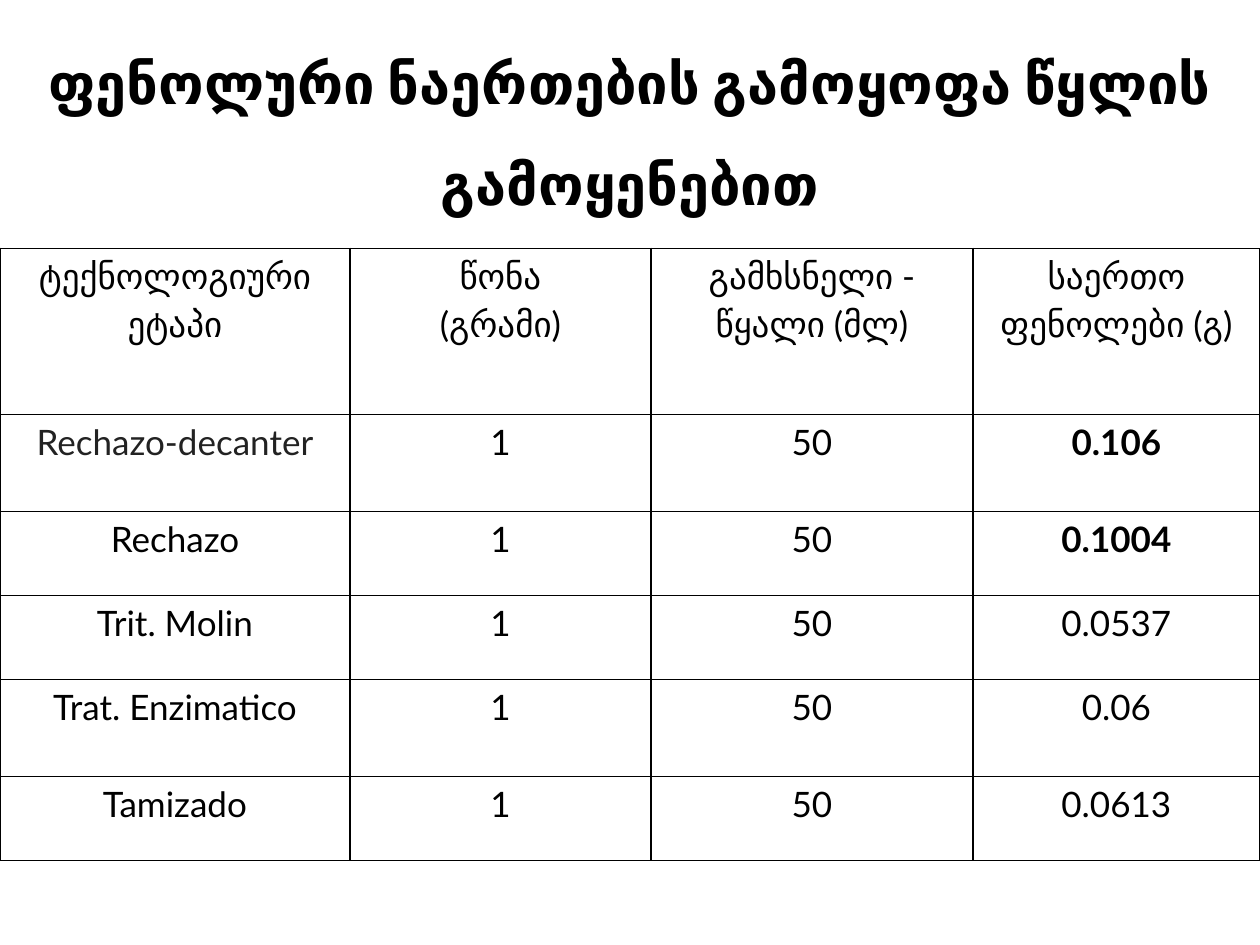
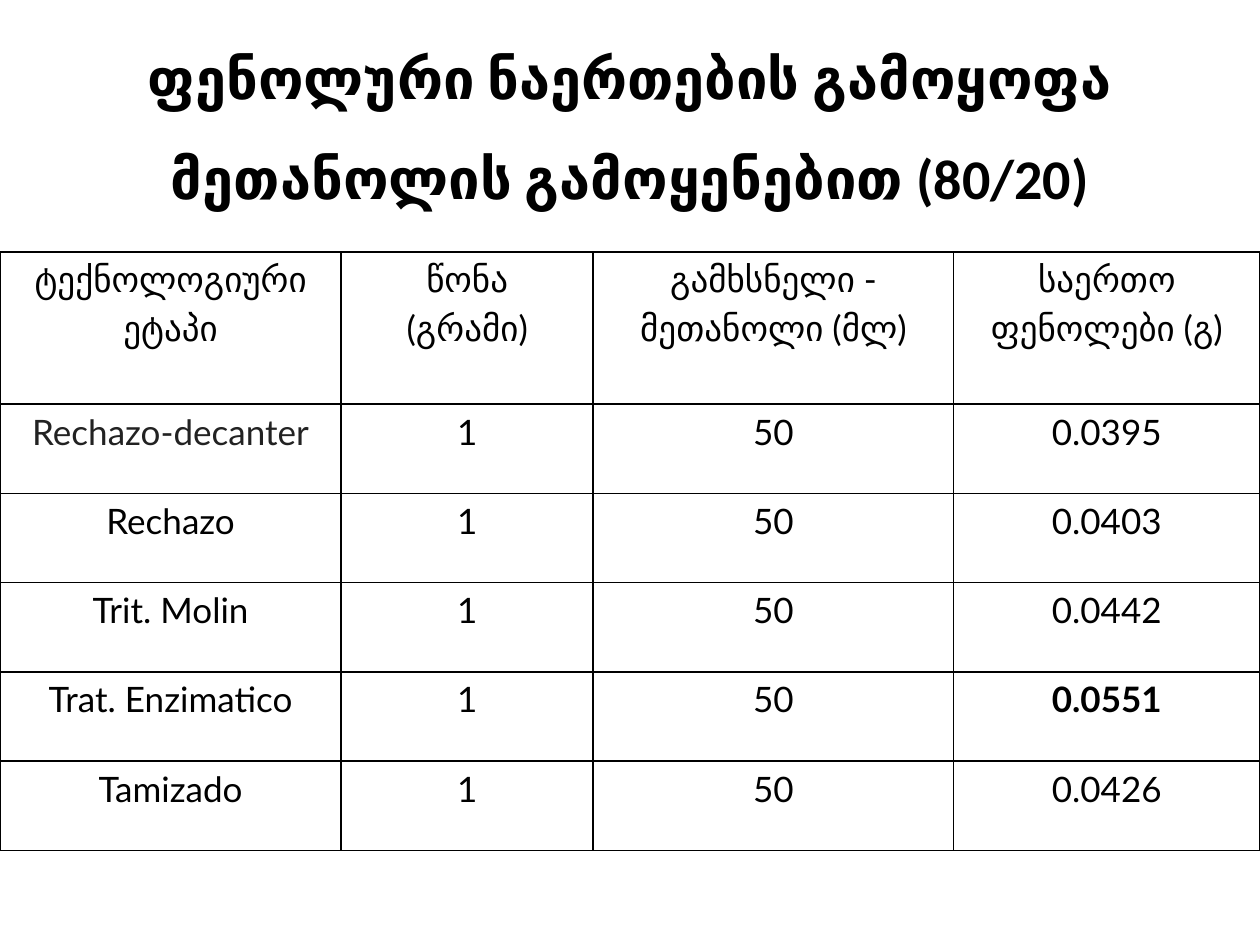
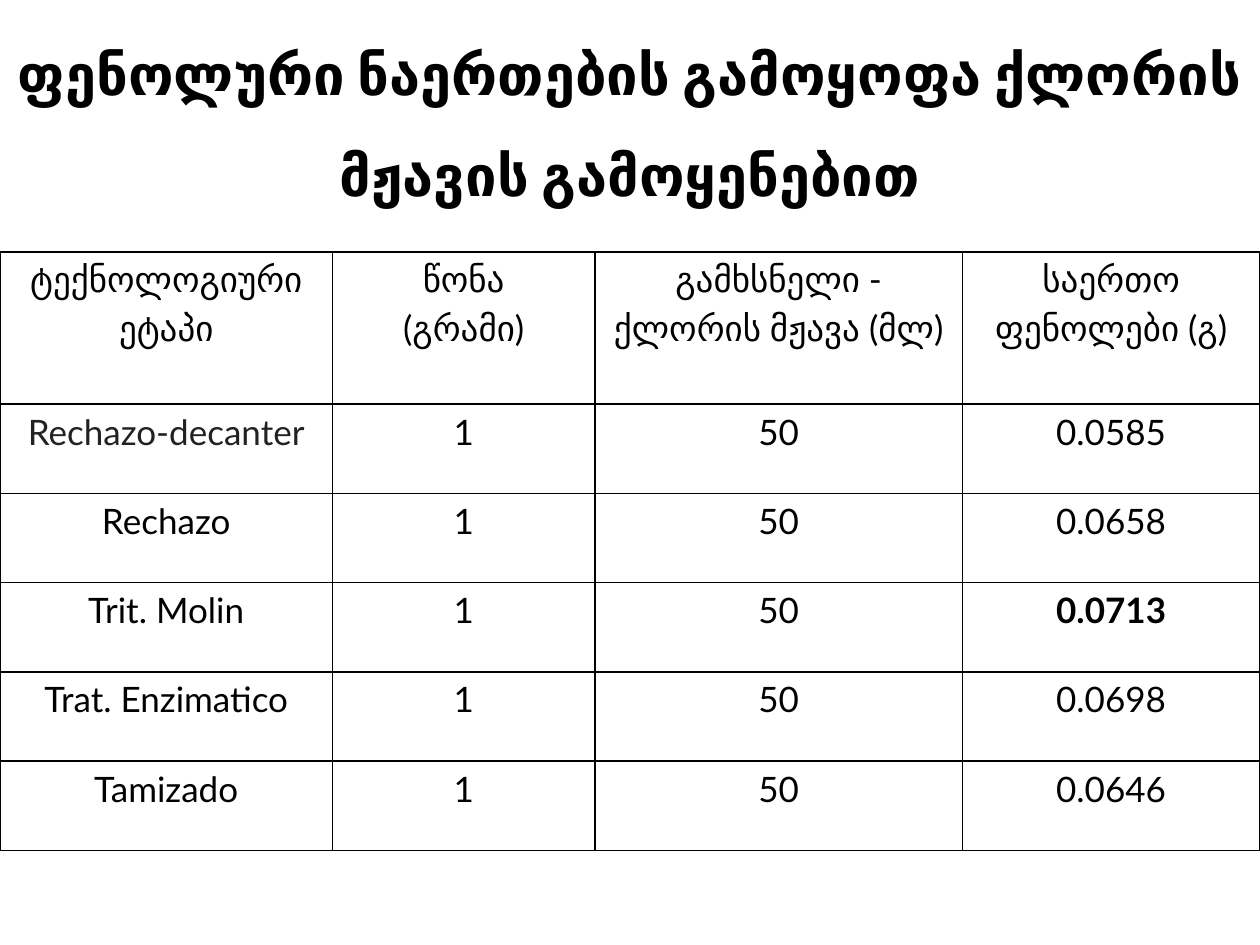
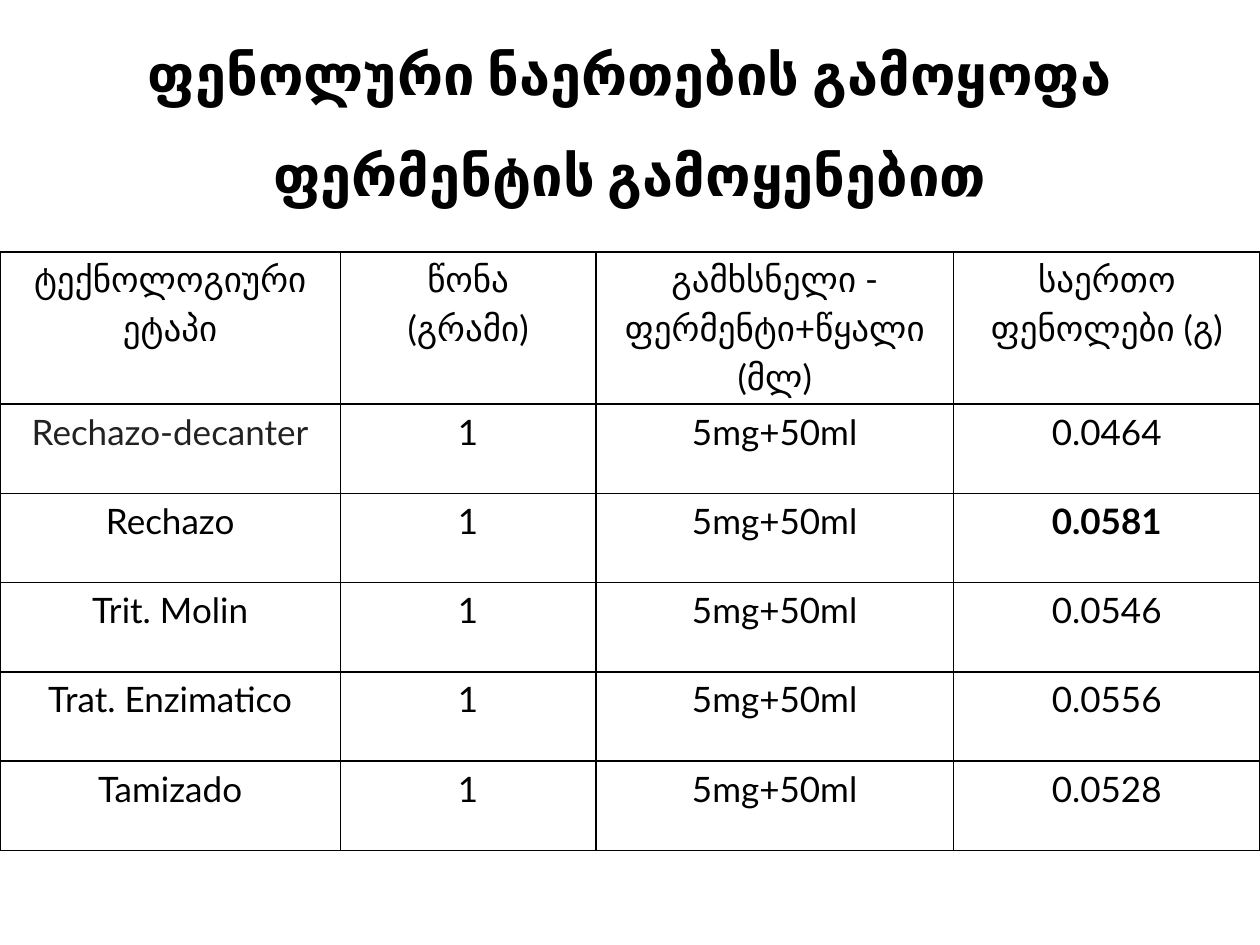
from dataclasses import dataclass

from lxml import etree
from pptx import Presentation
from pptx import util as u
from pptx.dml.color import RGBColor
from pptx.enum import text
from pptx.oxml import ns


@dataclass(frozen=True)
class Theme:
    ink: str = "000000"
    soft: str = "222222"
    head: str = "Calibri"
    body: str = "Lato"
    big: int = 32
    small: int = 20
    loose: float = 1.5
    tight: float = 1.15
    rule: int = 1


T = Theme()
WIDE, HIGH = 720, 540
MID, TOP = text.MSO_ANCHOR.MIDDLE, text.MSO_ANCHOR.TOP
LEAD = "ფენოლური ნაერთების გამოყოფა "
STAGES = ["Rechazo-decanter", "Rechazo", "Trit. Molin", "Trat. Enzimatico", "Tamizado"]
EVEN = [87] + [51] * 5

SLIDES = [
    dict(title="წყლის გამოყენებით", tall=132, anchor=MID,
         top=142, cols=[200, 172, 184, 164], rows=[95, 55.4, 48, 48, 55.4, 48],
         agent="წყალი (მლ)", dose="50", bold=(0, 1),
         yields=["0.106", "0.1004", "0.0537", "0.06", "0.0613"]),
    dict(title="მეთანოლის გამოყენებით (80/20)", tall=126, anchor=MID,
         top=144, cols=[195, 144, 206, 175], rows=EVEN,
         agent="მეთანოლი (მლ)", dose="50", bold=(3,),
         yields=["0.0395", "0.0403", "0.0442", "0.0551", "0.0426"]),
    dict(title="ქლორის მჟავის გამოყენებით", tall=124, anchor=TOP,
         top=144, cols=[190, 150, 210, 170], rows=EVEN,
         agent="ქლორის მჟავა (მლ)", dose="50", bold=(2,),
         yields=["0.0585", "0.0658", "0.0713", "0.0698", "0.0646"]),
    dict(title="ფერმენტის გამოყენებით", tall=118, anchor=TOP,
         top=144, cols=[194.5, 146, 204.5, 175], rows=EVEN,
         agent="ფერმენტი+წყალი (მლ)", dose="5mg+50ml", bold=(1,),
         yields=["0.0464", "0.0581", "0.0546", "0.0556", "0.0528"]),
]


def write(frame, words, font=T.body, size=T.small, color=T.ink, bold=False, gap=T.tight):
    frame.word_wrap = True
    for i, line in enumerate(words.split("\n")):
        para = frame.paragraphs[0] if i == 0 else frame.add_paragraph()
        para.alignment = text.PP_ALIGN.CENTER
        para.line_spacing = gap
        run = para.add_run()
        run.text = line
        run.font.name = font
        run.font.size = u.Pt(size)
        run.font.bold = bold
        run.font.color.rgb = RGBColor.from_string(color)


def add_title(slide, words, tall, anchor):
    box = slide.shapes.add_textbox(0, 0, u.Pt(WIDE), u.Pt(tall))
    box.text_frame.vertical_anchor = anchor
    write(box.text_frame, words, font=T.head, size=T.big, bold=True, gap=T.loose)


def frame_cell(cell):
    props = cell._tc.get_or_add_tcPr()
    for side in "LRTB":
        line = etree.SubElement(props, ns.qn(f"a:ln{side}"), w=str(u.Pt(T.rule)))
        fill = etree.SubElement(line, ns.qn("a:solidFill"))
        etree.SubElement(fill, ns.qn("a:srgbClr"), val=T.ink)
    cell.fill.background()


def fill_cell(cell, words, pad, **style):
    cell.margin_left = cell.margin_right = u.Pt(pad)
    cell.margin_top = cell.margin_bottom = 0
    frame_cell(cell)
    write(cell.text_frame, words, **style)


def add_grid(slide, top, cols, rows, agent, dose, yields, bold):
    grid = slide.shapes.add_table(len(rows), len(cols), 0, u.Pt(top),
                                  u.Pt(WIDE), u.Pt(sum(rows))).table
    grid.first_row = grid.horz_banding = False
    for col, width in zip(grid.columns, cols):
        col.width = u.Pt(width)
    for row, height in zip(grid.rows, rows):
        row.height = u.Pt(height)
    heads = ["ტექნოლოგიური ეტაპი", "წონა\n(გრამი)", f"გამხსნელი - {agent}",
             "საერთო ფენოლები (გ)"]
    for c, words in enumerate(heads):
        fill_cell(grid.cell(0, c), words, 5)
    for r, (stage, grams) in enumerate(zip(STAGES, yields)):
        cells = grid.rows[r + 1].cells
        fill_cell(cells[0], stage, 5, color=T.ink if r else T.soft)
        fill_cell(cells[1], "1", 5)
        fill_cell(cells[2], dose, 5)
        fill_cell(cells[3], grams, 4, bold=r in bold)


def main():
    deck = Presentation()
    deck.slide_width, deck.slide_height = u.Pt(WIDE), u.Pt(HIGH)
    for item in SLIDES:
        slide = deck.slides.add_slide(deck.slide_layouts[6])
        add_title(slide, LEAD + item["title"], item["tall"], item["anchor"])
        add_grid(slide, item["top"], item["cols"], item["rows"], item["agent"],
                 item["dose"], item["yields"], item["bold"])
    deck.save("out.pptx")


if __name__ == "__main__":
    main()
